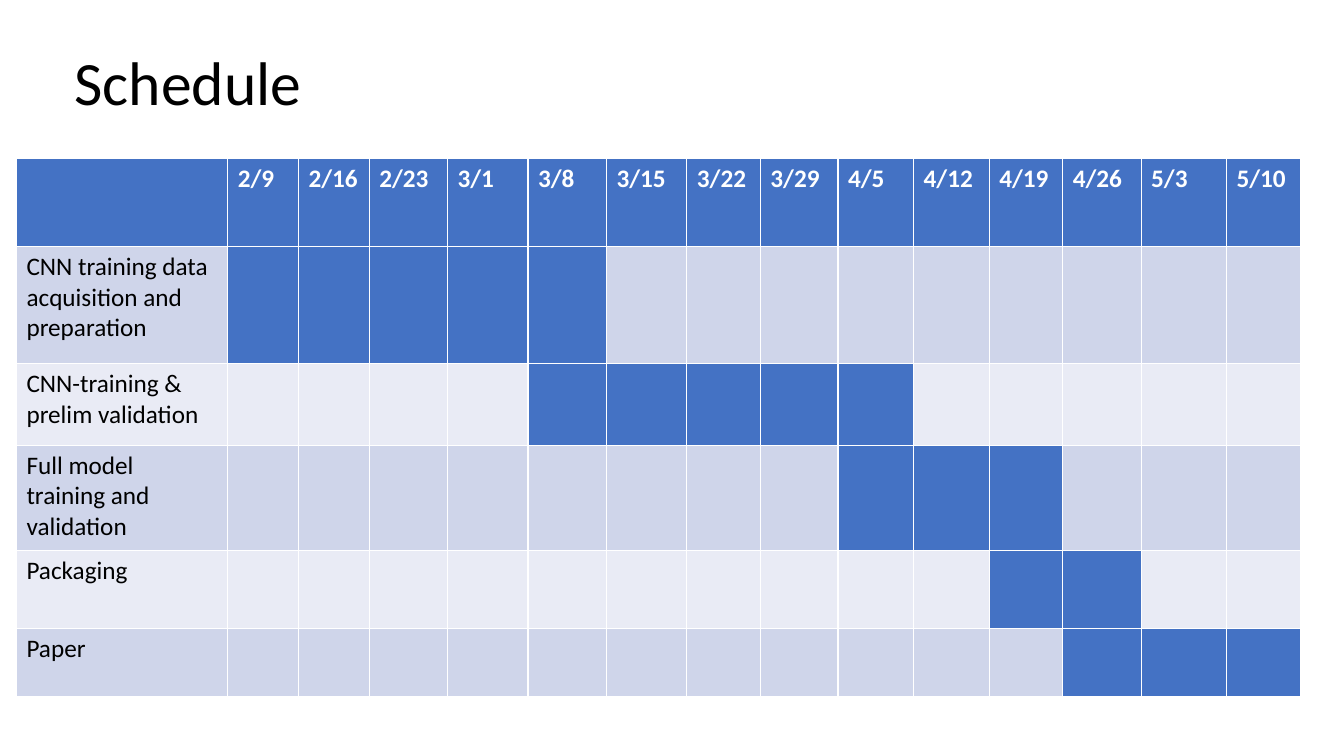
import pptx
import pptx.dml.color
import pptx.enum.text
import pptx.util

Pt = pptx.util.Pt
RGBColor = pptx.dml.color.RGBColor

BLUE = RGBColor(0x44, 0x72, 0xC4)
DARK_BAND = RGBColor(0xCF, 0xD5, 0xEA)
LIGHT_BAND = RGBColor(0xE9, 0xEB, 0xF5)
WHITE = RGBColor(0xFF, 0xFF, 0xFF)
BLACK = RGBColor(0x00, 0x00, 0x00)
FONT = "Calibri"

WEEKS = ["2/9", "2/16", "2/23", "3/1", "3/8", "3/15", "3/22",
         "3/29", "4/5", "4/12", "4/19", "4/26", "5/3", "5/10"]
TASKS = [
    ("CNN training data acquisition and preparation", "2/9", "3/8"),
    ("CNN-training & prelim validation", "3/8", "4/5"),
    ("Full model training and validation", "4/5", "4/19"),
    ("Packaging", "4/19", "4/26"),
    ("Paper", "4/26", "5/10"),
]
COLUMN_WIDTHS = [151, 50.5, 50.5, 56, 57.5, 56, 57.5, 52.5,
                 55.5, 54, 54, 52.5, 56, 61, 53]
ROW_HEIGHTS = [63, 83.5, 58.5, 75.5, 55.5, 49]


def place_title(page, box, text):
    """Move the title placeholder into the box and format its text."""
    title = page.shapes.title
    title.left, title.top, title.width, title.height = map(Pt, box)
    frame = title.text_frame
    frame.text = text
    frame.vertical_anchor = pptx.enum.text.MSO_ANCHOR.MIDDLE
    para = frame.paragraphs[0]
    para.alignment = pptx.enum.text.PP_ALIGN.LEFT
    para.line_spacing = 0.9
    para.font.name = FONT
    para.font.size = Pt(44)
    para.font.color.rgb = BLACK


def fill_cell(cell, fill, text="", color=BLACK, bold=False):
    """Colour a schedule cell and write its text."""
    cell.fill.solid()
    cell.fill.fore_color.rgb = fill
    cell.text = text
    para = cell.text_frame.paragraphs[0]
    para.font.name = FONT
    para.font.size = Pt(18)
    para.font.bold = bold
    para.font.color.rgb = color


def add_schedule(page, box):
    """Add the Gantt table, with one row per task and one column per week."""
    frame = page.shapes.add_table(len(TASKS) + 1, len(WEEKS) + 1, *map(Pt, box))
    table = frame.table
    for column, width in zip(table.columns, COLUMN_WIDTHS):
        column.width = Pt(width)
    for row, height in zip(table.rows, ROW_HEIGHTS):
        row.height = Pt(height)

    for index, week in enumerate([""] + WEEKS):
        fill_cell(table.cell(0, index), BLUE, week, WHITE, True)
    for row, (task, start, end) in enumerate(TASKS, 1):
        band = DARK_BAND if row % 2 else LIGHT_BAND
        fill_cell(table.cell(row, 0), band, task)
        first, last = WEEKS.index(start), WEEKS.index(end)
        for index in range(len(WEEKS)):
            active = first <= index <= last
            fill_cell(table.cell(row, index + 1), BLUE if active else band)


def main():
    """Build the schedule slide and save the deck."""
    deck = pptx.Presentation()
    deck.slide_width, deck.slide_height = Pt(960), Pt(540)
    page = deck.slides.add_slide(deck.slide_layouts[5])
    place_title(page, (46, 8.5, 828, 104.5), "Schedule")
    add_schedule(page, (11.75, 113, sum(COLUMN_WIDTHS), sum(ROW_HEIGHTS)))
    deck.save("out.pptx")


if __name__ == "__main__":
    main()
